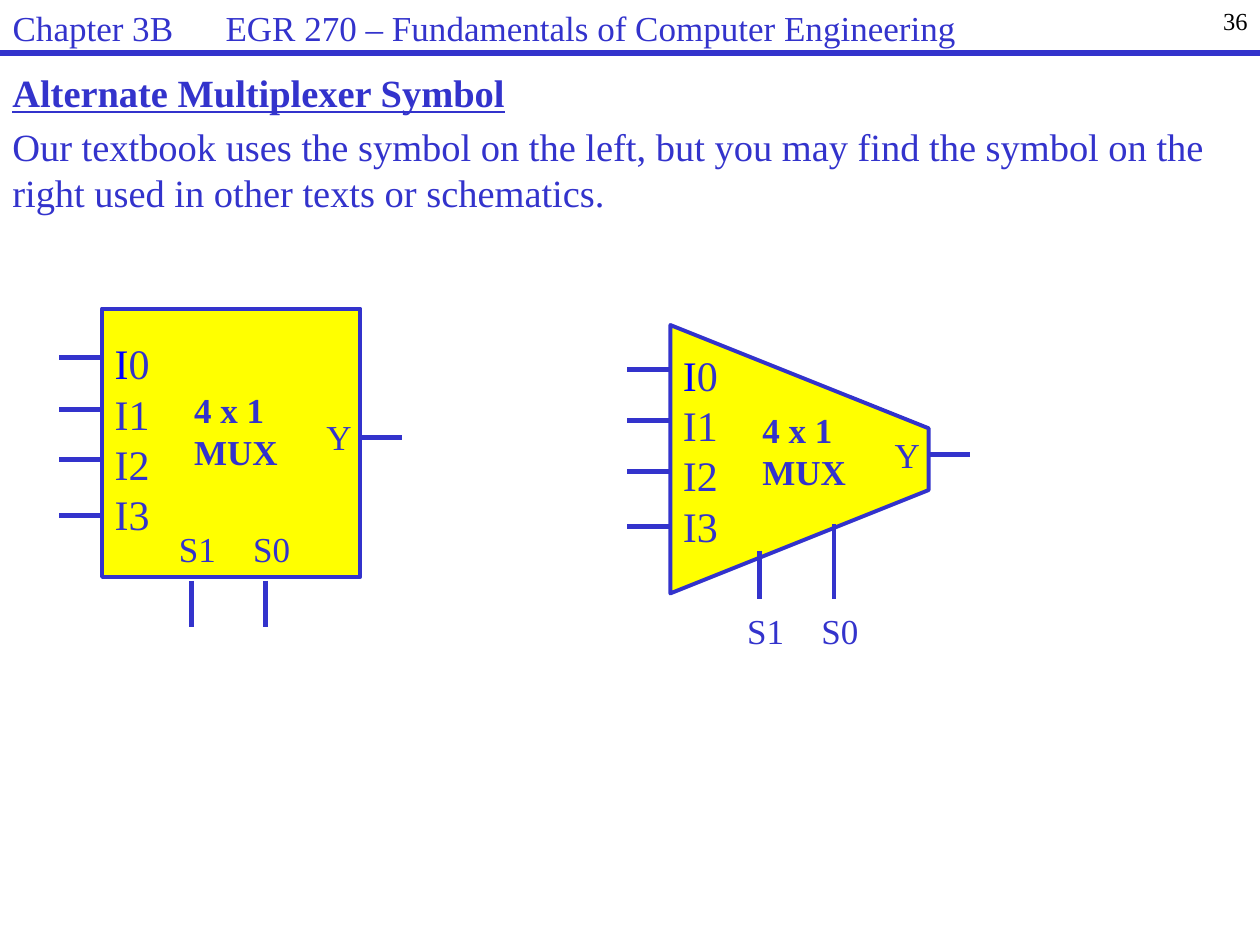
"""Build a slide that compares two schematic symbols for a 4 x 1 multiplexer."""
from lxml import etree
from pptx import Presentation, util as u
from pptx.dml.color import RGBColor
from pptx.enum import shapes, text
from pptx.oxml.ns import qn

COLORS = {"ink": "3333CC", "input": "0000FF", "body": "FFFF00", "number": "000000"}
WIDTH, HEIGHT = 10, 7.5
HEADER = 0.42
BODY_W, BODY_H = 2.05, 2.13
INPUT_ROWS = (0.39, 0.8, 1.2, 1.64)
SELECT_COLUMNS = (0.71, 1.3)
SQUARE = {"left": 0.81, "top": 2.45, "trapezoid": False, "name_y": 0.63,
          "inputs_y": 0.23, "output_y": 0.85, "selects_y": 1.74,
          "select_tops": (2.16, 2.16), "select_end": 2.53, "output_x": 2.06, "leads_y": 0}
TAPERED = {"left": 5.32, "top": 2.54, "trapezoid": True, "name_y": 0.7,
           "inputs_y": 0.23, "output_y": 0.9, "selects_y": 2.3,
           "select_tops": (1.83, 1.62), "select_end": 2.21, "output_x": 2.05, "leads_y": 0}


def color(name):
    """Return the named colour."""
    return RGBColor.from_string(COLORS[name])


def apply(target, values):
    """Set each attribute of the target from a dict."""
    for name, value in values.items():
        setattr(target, name, value)


def write(paragraph, words, size, ink="ink", **font):
    """Add one formatted run to a paragraph."""
    run = paragraph.add_run()
    run.text = words
    apply(run.font, {"name": "Times New Roman", "size": u.Pt(size), **font})
    run.font.color.rgb = color(ink)


def add_text(parent, left, top, width, height, **frame_format):
    """Add an empty text box and return its frame."""
    box = parent.add_textbox(*map(u.Inches, (left, top, width, height)))
    apply(box.text_frame, {"word_wrap": True, **frame_format})
    return box.text_frame


def add_label(parent, left, top, width, height, lines, size=20, **font):
    """Add a tight label whose lines are lists of (words, colour) runs."""
    frame = add_text(parent, left, top, width, height, word_wrap=False,
                     margin_left=0, margin_top=0, margin_right=0, margin_bottom=0)
    for index, runs in enumerate(lines):
        paragraph = frame.add_paragraph() if index else frame.paragraphs[0]
        for words, ink in runs:
            write(paragraph, words, size, ink, **font)


def add_line(parent, x1, y1, x2, y2, weight=2.75):
    """Add a straight line without a shadow."""
    line = parent.add_connector(shapes.MSO_CONNECTOR.STRAIGHT,
                                *map(u.Inches, (x1, y1, x2, y2)))
    line.line.color.rgb = color("ink")
    line.line.width = u.Pt(weight)
    etree.SubElement(line._element.spPr, qn("a:effectLst"))


def add_body(parent, left, top, trapezoid):
    """Add the yellow body, either square or tapering to the right."""
    if trapezoid:
        middle_x, middle_y = left + BODY_W / 2, top + 0.04 + BODY_H / 2
        box = (middle_x - BODY_H / 2, middle_y - BODY_W / 2, BODY_H, BODY_W)
        body = parent.add_shape(shapes.MSO_SHAPE.TRAPEZOID, *map(u.Inches, box))
        body.adjustments[0] = 0.4
        body.rotation = 90
    else:
        box = (left, top, BODY_W, BODY_H)
        body = parent.add_shape(shapes.MSO_SHAPE.RECTANGLE, *map(u.Inches, box))
    body.shadow.inherit = False
    body.fill.solid()
    body.fill.fore_color.rgb = color("body")
    body.line.color.rgb = color("ink")
    body.line.width = u.Pt(2.25)


def add_multiplexer(slide, symbol):
    """Add a multiplexer with its labels and leads as one group."""
    parent = slide.shapes.add_group_shape().shapes
    left, top = symbol["left"], symbol["top"]
    add_body(parent, left, top, symbol["trapezoid"])
    add_label(parent, left + 0.73, top + symbol["name_y"], 0.67, 0.67,
              [[("4 x 1", "ink")], [("MUX", "ink")]], bold=True)
    add_label(parent, left + 1.78, top + symbol["output_y"], 0.2, 0.34, [[("Y", "ink")]])
    inputs = [[("I", "input"), ("0", "ink")]] + [[(f"I{i}", "ink")] for i in (1, 2, 3)]
    add_label(parent, left + 0.1, top + symbol["inputs_y"], 0.28, 1.62, inputs, size=24)
    for column, name, start in zip(SELECT_COLUMNS, ("S1", "S0"), symbol["select_tops"]):
        add_label(parent, left + column - 0.1, top + symbol["selects_y"], 0.3, 0.34,
                  [[(name, "ink")]])
        add_line(parent, left + column, top + start,
                 left + column, top + symbol["select_end"])
    for row in INPUT_ROWS:
        add_line(parent, left, top + row, left - 0.34, top + row)
    output_y = top + symbol["output_y"] + 0.17
    add_line(parent, left + symbol["output_x"], output_y, left + 2.38, output_y)


def add_header(slide):
    """Format the title as the running header, with page number and rule."""
    title = slide.shapes.title
    apply(title, {"left": 0, "top": 0, "width": u.Inches(9.25), "height": u.Inches(HEADER)})
    apply(title.text_frame, {"vertical_anchor": text.MSO_ANCHOR.TOP, "word_wrap": True,
                             "auto_size": text.MSO_AUTO_SIZE.NONE})
    paragraph = title.text_frame.paragraphs[0]
    paragraph.alignment = text.PP_ALIGN.LEFT
    tabs = etree.SubElement(paragraph._p.get_or_add_pPr(), qn("a:tabLst"))
    etree.SubElement(tabs, qn("a:tab"), pos=str(u.Inches(1.69)), algn="l")
    write(paragraph, "Chapter 3B\tEGR 270 – Fundamentals of Computer Engineering", 20)
    number = add_text(slide.shapes, 9.33, 0, 0.67, HEADER).paragraphs[0]
    number.alignment = text.PP_ALIGN.RIGHT
    write(number, "36", 14, "number")
    add_line(slide.shapes, 0, HEADER, WIDTH, HEADER, 3)


def add_introduction(slide):
    """Add the underlined heading and the sentence below it."""
    frame = add_text(slide.shapes, 0, 0.5, WIDTH, 1.33)
    write(frame.paragraphs[0], "Alternate Multiplexer Symbol", 22, bold=True, underline=True)
    paragraph = frame.add_paragraph()
    paragraph.space_before = u.Pt(4.4)
    write(paragraph, "Our textbook uses the symbol on the left, but you may find "
          "the symbol on the right used in other texts or schematics.", 22)


def main():
    """Build and save the slide."""
    presentation = Presentation()
    apply(presentation, {"slide_width": u.Inches(WIDTH), "slide_height": u.Inches(HEIGHT)})
    slide = presentation.slides.add_slide(presentation.slide_layouts[5])
    add_header(slide)
    add_introduction(slide)
    for symbol in (SQUARE, TAPERED):
        add_multiplexer(slide, symbol)
    presentation.save("out.pptx")


if __name__ == "__main__":
    main()
